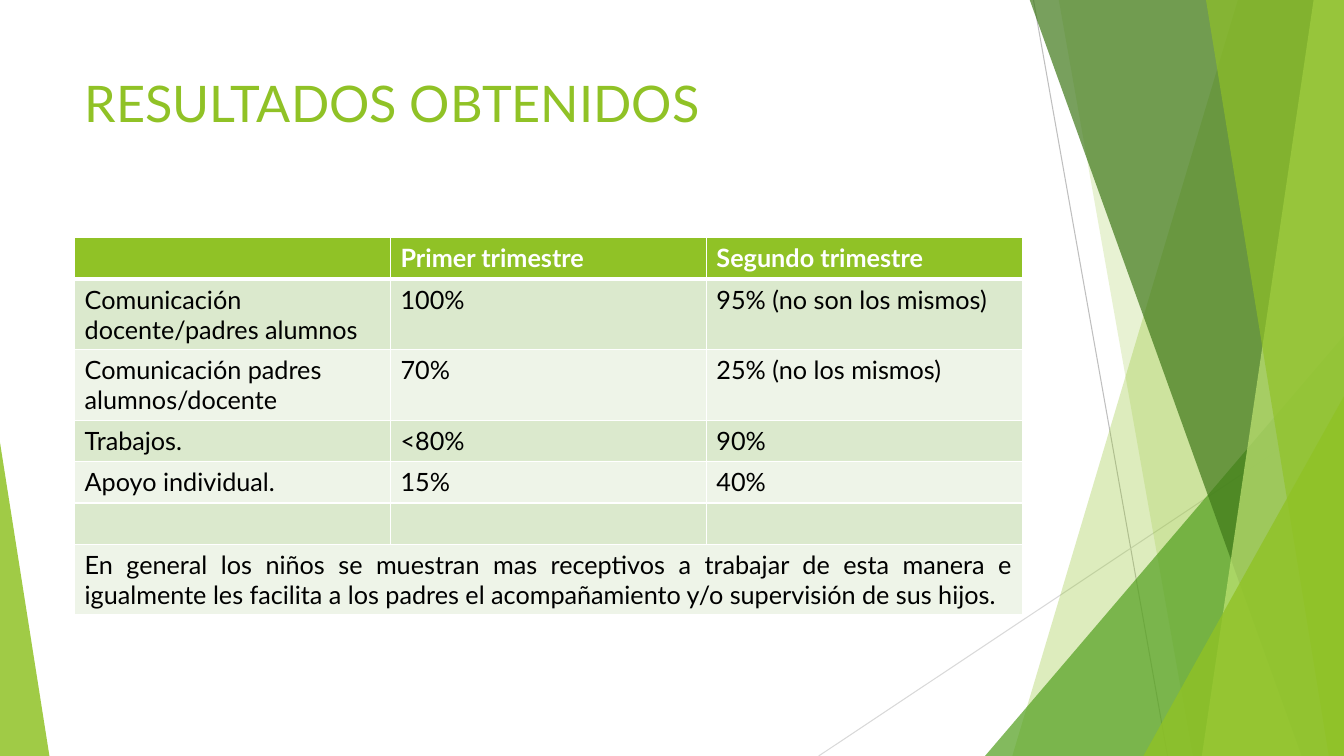
"""Build the slide of results obtained per term, with its faceted green frame."""
from lxml import etree
from pptx import Presentation
from pptx.dml.color import RGBColor
from pptx.enum.shapes import MSO_CONNECTOR, MSO_SHAPE
from pptx.enum.text import PP_ALIGN
from pptx.oxml.ns import qn
from pptx.util import Inches, Pt

STRAIGHT = MSO_CONNECTOR.STRAIGHT
TRIANGLE = MSO_SHAPE.ISOSCELES_TRIANGLE
LEFT, JUSTIFY = PP_ALIGN.LEFT, PP_ALIGN.JUSTIFY

THEME = {
    "font": "Lato", "title_size": 36, "body_size": 18,
    "green": "90C226", "leaf": "54A021", "forest": "3F7819", "lime": "C0E474",
    "band_dark": "DBE9CD", "band_light": "EEF4E8",
    "white": "FFFFFF", "black": "000000",
    "line_dark": "BFBFBF", "line_light": "D9D9D9",
}

TITLE = "RESULTADOS OBTENIDOS"
HEADER = ["", "Primer trimestre", "Segundo trimestre"]
RESULTS = [
    ["Comunicación docente/padres alumnos", "100%", "95% (no son los mismos)"],
    ["Comunicación padres alumnos/docente", "70%", "25% (no los mismos)"],
    ["Trabajos.", "<80%", "90%"],
    ["Apoyo individual.", "15%", "40%"],
    ["", "", ""],
]
CONCLUSION = ("En general los niños se muestran mas receptivos a trabajar de esta manera "
              "e igualmente les facilita a los padres el acompañamiento y/o supervisión "
              "de sus hijos.")

SLIDE_W, SLIDE_H = 13.33, 7.5
CONTENT_LEFT, CONTENT_W = 0.74, 9.4
TITLE_TOP, TITLE_H = 0.67, 1.44
TABLE_TOP, ROW_H = 2.36, 0.41
FACET_TOP = -0.01

RAYS = [
    ((10.25, 0), (11.58, SLIDE_H), "line_dark"),
    ((SLIDE_W, 4.03), (8.12, SLIDE_H), "line_light"),
]
# facet: x at top, x at bottom, colour, opacity; triangle: left, top, width, apex, colour, opacity
BACKDROP = [
    ("facet", (12.28, 10.04), "green", 30),
    ("facet", (10.5, 11.83), "green", 20),
    ("triangle", (9.77, 3.33, 3.56, 1), "leaf", 72),
    ("facet", (10.21, 12.91), "forest", 70),
    ("facet", (13.03, 11.92), "lime", 70),
    ("facet", (11.96, 13.18), "green", 65),
    ("triangle", (11.34, 3.93, 1.99, 1), "green", 80),
    ("triangle", (0, 4.39, 0.49, 0), "green", 85),
]


def colour(key):
    return RGBColor.from_string(THEME[key])


def paint(shape, key, opacity):
    shape.shadow.inherit = False
    shape.line.fill.background()
    shape.fill.solid()
    shape.fill.fore_color.rgb = colour(key)
    tint = shape.fill._xPr.find(qn("a:solidFill"))[0]
    etree.SubElement(tint, qn("a:alpha"), val=str(opacity * 1000))


def add_ray(slide, start, end, key):
    ray = slide.shapes.add_connector(STRAIGHT, *map(Inches, start + end))
    ray.line.color.rgb = colour(key)
    ray.line.width = Pt(0.75)
    etree.SubElement(ray._element.spPr, qn("a:effectLst"))


def add_facet(slide, top_x, bottom_x):
    corners = [(SLIDE_W, FACET_TOP), (SLIDE_W, SLIDE_H), (bottom_x, SLIDE_H)]
    outline = slide.shapes.build_freeform(Inches(top_x), Inches(FACET_TOP))
    outline.add_line_segments([(Inches(x), Inches(y)) for x, y in corners], close=True)
    return outline.convert_to_shape()


def add_triangle(slide, left, top, width, apex):
    triangle = slide.shapes.add_shape(
        TRIANGLE, *map(Inches, (left, top, width, SLIDE_H - top)))
    triangle.adjustments[0] = apex
    return triangle


def write(frame, text, size, key, bold=False, align=LEFT):
    frame.word_wrap = True
    paragraph = frame.paragraphs[0]
    paragraph.alignment = align
    paragraph.font.size = Pt(size)
    if text:
        run = paragraph.add_run()
        run.text = text
        run.font.name = THEME["font"]
        run.font.size = Pt(size)
        run.font.bold = bold
        run.font.color.rgb = colour(key)


def add_borders(cell, top, bottom):
    properties = cell._tc.get_or_add_tcPr()
    for side, points in (("L", 1), ("R", 1), ("T", top), ("B", bottom)):
        border = etree.SubElement(properties, qn("a:ln" + side), w=str(Pt(points)))
        fill = etree.SubElement(border, qn("a:solidFill"))
        etree.SubElement(fill, qn("a:srgbClr"), val=THEME["white"])


def add_results(slide):
    rows = [HEADER, *RESULTS, [CONCLUSION, "", ""]]
    last = len(rows) - 1
    table = slide.shapes.add_table(
        len(rows), len(HEADER), Inches(CONTENT_LEFT), Inches(TABLE_TOP),
        Inches(CONTENT_W), Inches(ROW_H * len(rows))).table
    table.cell(last, 0).merge(table.cell(last, len(HEADER) - 1))
    for r, row in enumerate(rows):
        table.rows[r].height = Inches(ROW_H)
        is_header = r == 0
        band = "green" if is_header else "band_dark" if r % 2 else "band_light"
        for c, text in enumerate(row):
            cell = table.cell(r, c)
            add_borders(cell, 3 if r == 1 else 1, 3 if is_header else 1)
            cell.fill.solid()
            cell.fill.fore_color.rgb = colour(band)
            write(cell.text_frame, text, THEME["body_size"],
                  "white" if is_header else "black", is_header,
                  JUSTIFY if r == last else LEFT)


def main():
    deck = Presentation()
    deck.slide_width, deck.slide_height = Inches(SLIDE_W), Inches(SLIDE_H)
    slide = deck.slides.add_slide(deck.slide_layouts[6])
    for start, end, key in RAYS:
        add_ray(slide, start, end, key)
    builders = {"facet": add_facet, "triangle": add_triangle}
    for kind, geometry, key, opacity in BACKDROP:
        paint(builders[kind](slide, *geometry), key, opacity)
    title = slide.shapes.add_textbox(
        *map(Inches, (CONTENT_LEFT, TITLE_TOP, CONTENT_W, TITLE_H)))
    write(title.text_frame, TITLE, THEME["title_size"], "green")
    add_results(slide)
    deck.save("out.pptx")


if __name__ == "__main__":
    main()
